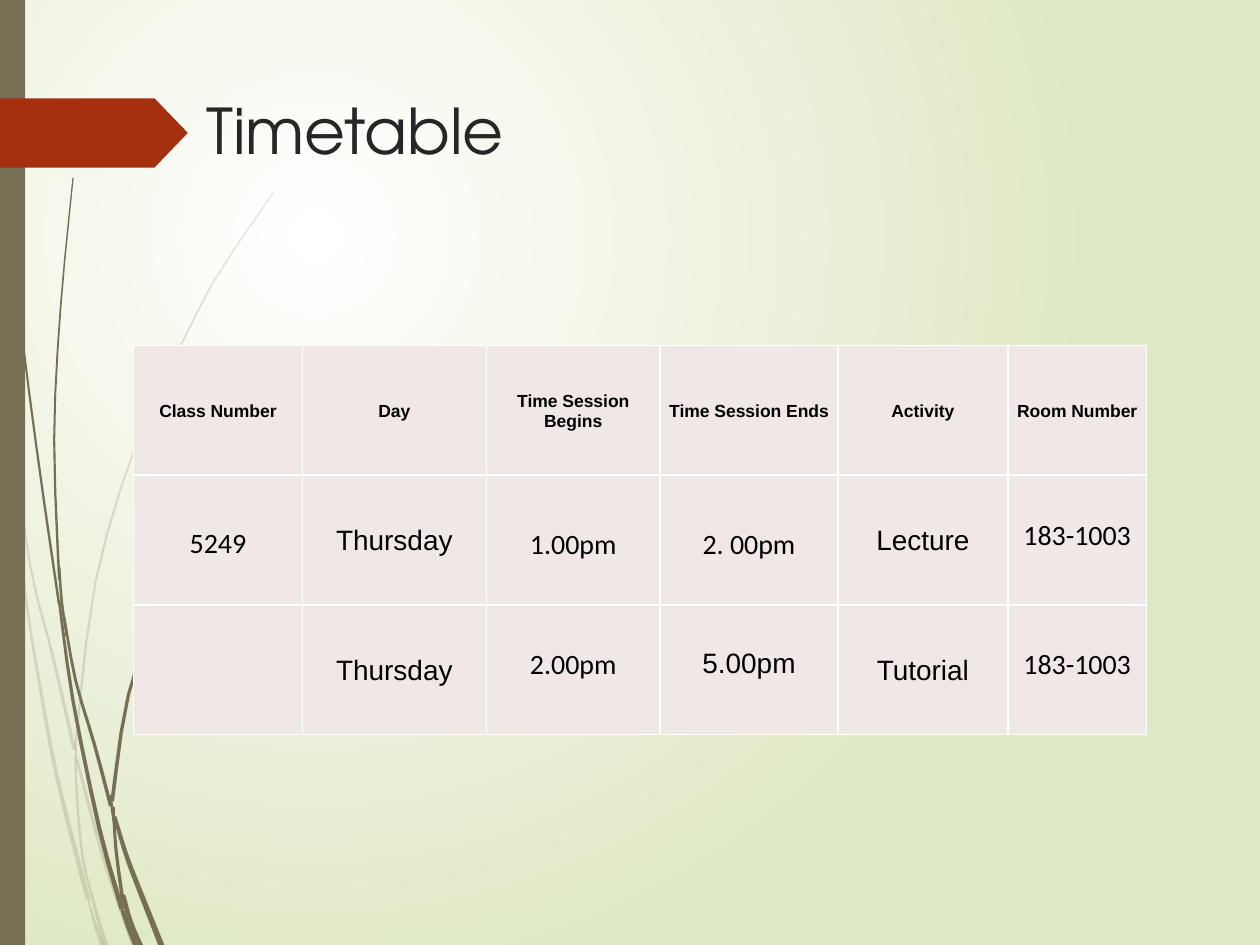
from dataclasses import dataclass

from lxml.etree import SubElement
from pptx import Presentation
from pptx.dml.color import RGBColor
from pptx.enum.shapes import MSO_SHAPE as Shape
from pptx.enum.text import MSO_ANCHOR as Anchor, PP_ALIGN as Align
from pptx.oxml.ns import qn
from pptx.shapes.autoshape import Shape as AutoShape
from pptx.slide import Slide
from pptx.table import _Cell as Cell
from pptx.util import Inches, Pt

Point = tuple[float, float]


@dataclass(frozen=True)
class Theme:
    glow: str = "FFFFFF"
    meadow: str = "DFE8C4"
    stem: str = "766F54"
    ribbon: str = "A53010"
    title: str = "262626"
    ink: str = "000000"
    cell: str = "F0E8E7"
    border: str = "FFFFFF"
    title_font: str = "TeX Gyre Adventor"
    title_size: int = 36
    header_size: int = 10
    body_size: int = 16


@dataclass(frozen=True)
class Blade:
    points: tuple[Point, ...]
    tip: float
    root: float
    opacity: int = 100


@dataclass(frozen=True)
class Entry:
    text: str
    font: str = "Arial"
    drop: float = 0.38


THEME = Theme()
FAINT = 20
BLADES = (
    Blade(((0, 2.9), (0.04, 3.2), (0.08, 3.5)), 0.02, 0.02, FAINT),
    Blade(((0.08, 3.5), (0.2, 4.7), (0.32, 5.46), (0.46, 6.2), (0.7, 7.14)), 0.01, 0.04, FAINT),
    Blade(((0.7, 7.14), (0.75, 7.32), (0.81, 7.5)), 0.01, 0.04, FAINT),
    Blade(((0.1, 3.45), (0.24, 4.49), (0.42, 5.21), (0.59, 5.95)), 0.01, 0.03, FAINT),
    Blade(((0.61, 6.02), (0.72, 6.45), (0.86, 6.93), (1.06, 7.5)), 0.02, 0.04, FAINT),
    Blade(((2.17, 1.53), (1.86, 1.98), (1.58, 2.45), (1.1, 3.48), (0.76, 4.61), (0.6, 5.9)), 0.01, 0.02, FAINT),
    Blade(((0.6, 5.9), (0.6, 6), (0.6, 6.1)), 0.02, 0.02, FAINT),
    Blade(((0.6, 6.1), (0.62, 6.46), (0.66, 6.83), (0.73, 7.11)), 0.02, 0.02, FAINT),
    Blade(((0.73, 7.11), (0.78, 7.3), (0.84, 7.5)), 0.02, 0.04, FAINT),
    Blade(((0.03, 0), (0.05, 1.1), (0.14, 2.33), (0.29, 3.55), (0.47, 4.8)), 0.01, 0.02),
    Blade(((0.47, 4.77), (0.58, 5.56), (0.79, 6.58), (0.97, 7.22)), 0.02, 0.04),
    Blade(((0.97, 7.22), (1.02, 7.36), (1.08, 7.5)), 0.03, 0.05),
    Blade(((0.58, 1.41), (0.48, 2.45), (0.43, 3.49), (0.47, 4.6)), 0.01, 0.02),
    Blade(((0.47, 4.5), (0.49, 4.77), (0.53, 5.05)), 0.02, 0.02),
    Blade(((0.51, 4.9), (0.6, 5.4), (0.75, 5.91), (0.88, 6.4)), 0.02, 0.03),
    Blade(((0.88, 6.31), (0.89, 6.43), (0.91, 6.56)), 0.02, 0.02),
    Blade(((0.91, 6.48), (1, 6.78), (1.11, 7.07), (1.28, 7.5)), 0.03, 0.05),
    Blade(((2.16, 3.44), (1.91, 3.74), (1.68, 4.06), (1.3, 4.75), (1.02, 5.51), (0.89, 6.36)), 0.01, 0.03),
    Blade(((0.9, 6.4), (0.92, 6.74), (0.98, 7.19)), 0.02, 0.03),
    Blade(((0.98, 7.1), (1.03, 7.3), (1.11, 7.5)), 0.03, 0.05),
)
COLUMN_WIDTHS = (1.34, 1.46, 1.38, 1.41, 1.35, 1.1)
ROW_HEIGHT = 1.03
HEADERS = ("Class Number", "Day", "Time Session Begins", "Time Session Ends", "Activity", "Room Number")
SESSIONS = (
    (Entry("5249", "Calibri", 0.39), Entry("Thursday"), Entry("1.00pm", "Calibri", 0.4),
     Entry("2. 00pm", "Calibri", 0.4), Entry("Lecture"), Entry("183-1003", "Calibri", 0.33)),
    (None, Entry("Thursday"), Entry("2.00pm", "Calibri", 0.32),
     Entry("5.00pm", drop=0.33), Entry("Tutorial"), Entry("183-1003", "Calibri", 0.32)),
)


def rgb(value: str) -> RGBColor:
    """Turn a hex string into a colour."""
    return RGBColor.from_string(value)


def paint(shape: AutoShape, color: str, opacity: int = 100) -> None:
    """Give a shape a flat fill without line or shadow."""
    shape.shadow.inherit = False
    shape.line.fill.background()
    shape.fill.solid()
    shape.fill.fore_color.rgb = rgb(color)
    if opacity < 100:
        tint = shape.fill._xPr.find(f".//{qn('a:srgbClr')}")
        SubElement(tint, qn("a:alpha"), val=str(opacity * 1000))


def smooth(points: tuple[Point, ...], steps: int = 3) -> list[Point]:
    """Run a Catmull-Rom curve through the points."""
    padded = (points[0], *points, points[-1])
    curve = []
    for a, b, c, d in zip(padded, padded[1:], padded[2:], padded[3:]):
        for step in range(steps):
            t = step / steps
            curve.append(tuple(
                q + t * (r - p) / 2 + t**2 * (2 * p - 5 * q + 4 * r - s) / 2
                + t**3 * (3 * q - p - 3 * r + s) / 2
                for p, q, r, s in zip(a, b, c, d)
            ))
    return curve + [points[-1]]


def draw_blade(slide: Slide, blade: Blade) -> None:
    """Draw a length of grass that widens from tip to root."""
    curve = smooth(blade.points)
    left, right = [], []
    for index, (x, y) in enumerate(curve):
        half = (blade.tip + (blade.root - blade.tip) * index / (len(curve) - 1)) / 2
        left.append((Inches(max(x - half, 0)), Inches(y)))
        right.append((Inches(x + half), Inches(y)))
    outline = left + right[::-1]
    builder = slide.shapes.build_freeform(*outline[0])
    builder.add_line_segments(outline[1:], close=True)
    paint(builder.convert_to_shape(), THEME.stem, blade.opacity)


def draw_background(slide: Slide) -> None:
    """Fill the page with a circular glow."""
    fill = slide.background.fill
    fill.gradient()
    for stop, color in zip(fill.gradient_stops, (THEME.glow, THEME.meadow)):
        stop.color.rgb = rgb(color)
    gradient = slide._element.find(f".//{qn('a:gradFill')}")
    gradient.remove(gradient.find(qn("a:lin")))
    circle = SubElement(gradient, qn("a:path"), path="circle")
    SubElement(circle, qn("a:fillToRect"), l="50000", t="50000", r="100000", b="100000")


def draw_title(slide: Slide, text: str) -> None:
    """Write the page title."""
    box = slide.shapes.add_textbox(Inches(1.54), Inches(0.67), Inches(7.72), Inches(0.71))
    frame = box.text_frame
    frame.word_wrap = True
    frame.vertical_anchor = Anchor.MIDDLE
    frame.text = text
    font = frame.paragraphs[0].runs[0].font
    font.name, font.size = THEME.title_font, Pt(THEME.title_size)
    font.color.rgb = rgb(THEME.title)


def style_cell(cell: Cell) -> None:
    """Set the borders, fill and margins of a cell."""
    properties = cell._tc.get_or_add_tcPr()
    for side in ("L", "R", "T", "B"):
        line = SubElement(properties, qn(f"a:ln{side}"), w=str(Pt(1)))
        SubElement(SubElement(line, qn("a:solidFill")), qn("a:srgbClr"), val=THEME.border)
    cell.fill.solid()
    cell.fill.fore_color.rgb = rgb(THEME.cell)
    cell.margin_left = cell.margin_right = cell.margin_top = Inches(0.01)
    cell.margin_bottom = 0


def write_cell(cell: Cell, entry: Entry, size: int, header: bool = False) -> None:
    """Write one centred entry into a cell."""
    cell.text_frame.text = entry.text
    cell.vertical_anchor = Anchor.MIDDLE if header else Anchor.TOP
    cell.margin_top = Inches(entry.drop)
    para = cell.text_frame.paragraphs[0]
    para.alignment, para.line_spacing, para.space_after = Align.CENTER, 1.07, Pt(8)
    font = para.runs[0].font
    font.name, font.size, font.bold = entry.font, Pt(size), header
    font.color.rgb = rgb(THEME.ink)


def draw_timetable(slide: Slide) -> None:
    """Build the table of class sessions."""
    row_count = len(SESSIONS) + 1
    frame = slide.shapes.add_table(
        row_count, len(HEADERS), Inches(1.06), Inches(2.74),
        Inches(sum(COLUMN_WIDTHS)), Inches(ROW_HEIGHT * row_count))
    table = frame.table
    table.first_row = table.horz_banding = False
    for column, width in zip(table.columns, COLUMN_WIDTHS):
        column.width = Inches(width)
    for cell in table.iter_cells():
        style_cell(cell)
    for column, text in enumerate(HEADERS):
        write_cell(table.cell(0, column), Entry(text, drop=0.01), THEME.header_size, header=True)
    for row, session in enumerate(SESSIONS, start=1):
        for column, entry in enumerate(session):
            if entry:
                write_cell(table.cell(row, column), entry, THEME.body_size)


def main() -> None:
    """Build and save the deck."""
    deck = Presentation()
    deck.slide_width, deck.slide_height = Inches(10), Inches(7.5)
    page = deck.slides.add_slide(deck.slide_layouts[6])
    draw_background(page)
    for blade in BLADES:
        draw_blade(page, blade)
    bar = page.shapes.add_shape(Shape.RECTANGLE, 0, 0, Inches(0.2), Inches(7.5))
    paint(bar, THEME.stem)
    ribbon = page.shapes.add_shape(Shape.PENTAGON, 0, Inches(0.78), Inches(1.49), Inches(0.55))
    ribbon.adjustments[0] = 0.48
    paint(ribbon, THEME.ribbon)
    draw_title(page, "Timetable")
    draw_timetable(page)
    deck.save("out.pptx")


if __name__ == "__main__":
    main()
